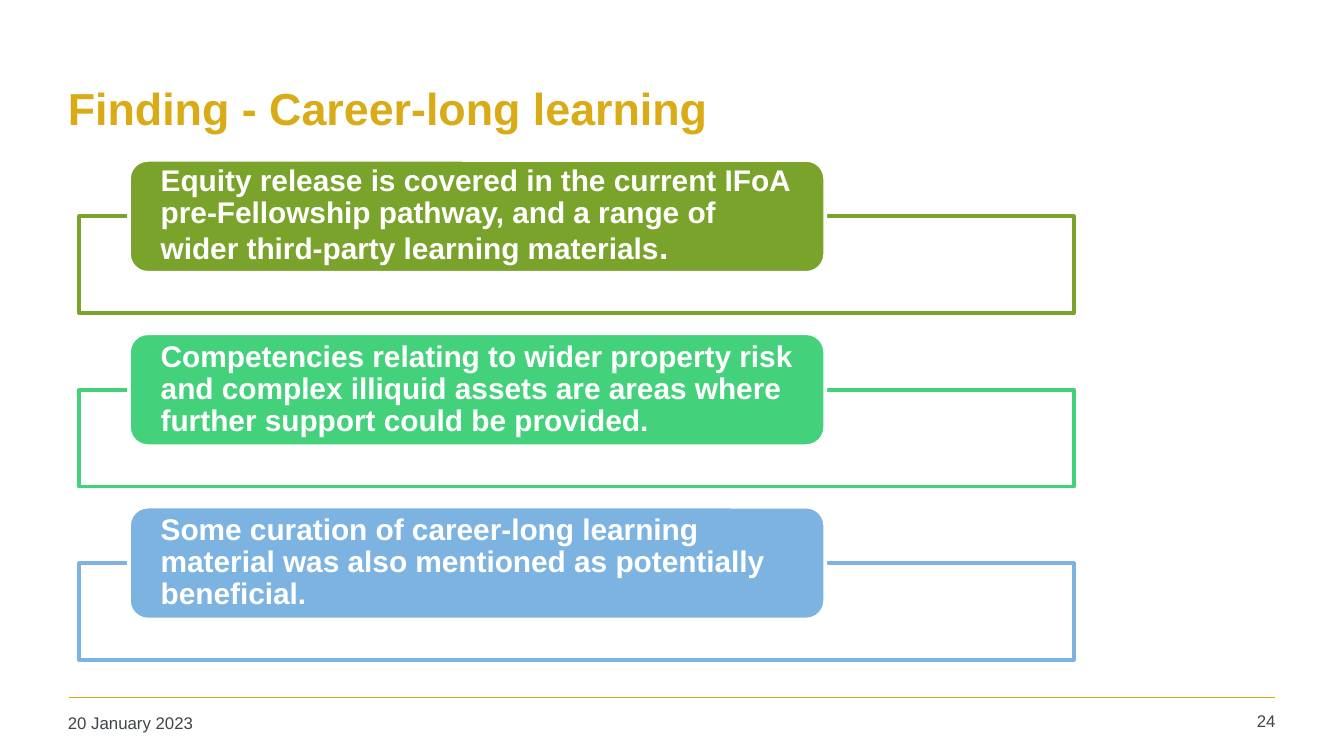
from dataclasses import dataclass

from pptx import Presentation
from pptx.dml.color import RGBColor
from pptx.enum.shapes import MSO_CONNECTOR, MSO_SHAPE
from pptx.enum.text import MSO_ANCHOR, PP_ALIGN
from pptx.oxml.ns import qn
from pptx.shapes.autoshape import Shape
from pptx.slide import Slide
from pptx.text.text import TextFrame
from pptx.util import Emu, Pt

EMU_PER_PX = 4572  # 200 px to the inch


@dataclass(frozen=True)
class Theme:
    font: str = "Arial"
    gold: str = "D9AB16"
    grey: str = "3F4548"
    white: str = "FFFFFF"
    olive: str = "79A32A"
    green: str = "44D17C"
    blue: str = "7CB3E1"
    title_size: int = 24
    body_size: int = 16
    stop_size: int = 18
    footer_size: int = 9


@dataclass(frozen=True)
class Box:
    left: int
    top: int
    width: int
    height: int


@dataclass(frozen=True)
class Inset:
    left: int
    top: int
    right: int
    bottom: int


@dataclass(frozen=True)
class Span:
    text: str
    size: int
    color: str
    bold: bool = False


@dataclass(frozen=True)
class Finding:
    color: str
    spans: tuple[Span, ...]


@dataclass(frozen=True)
class Label:
    box: Box
    span: Span
    align: PP_ALIGN = PP_ALIGN.LEFT
    anchor: MSO_ANCHOR = MSO_ANCHOR.TOP


THEME = Theme()
PAGE_WIDTH, PAGE_HEIGHT = 2000, 1125
FIRST_TOP, FINDING_PITCH, FRAME_DROP = 238, 258, 84
LABEL_INSET = Inset(15, 8, 15, 8)
BANNER_INSET = Inset(39, 0, 36, 0)


def px(length: int) -> Emu:
    return Emu(length * EMU_PER_PX)


def place(box: Box) -> tuple[Emu, ...]:
    return px(box.left), px(box.top), px(box.width), px(box.height)


def body_span(text: str, size: int = THEME.body_size) -> Span:
    return Span(text, size, THEME.white, bold=True)


def write(frame: TextFrame, spans: tuple[Span, ...], inset: Inset,
          align: PP_ALIGN, anchor: MSO_ANCHOR, spacing: float = 1.0) -> None:
    frame_format = {
        "word_wrap": True, "vertical_anchor": anchor,
        "margin_left": px(inset.left), "margin_right": px(inset.right),
        "margin_top": px(inset.top), "margin_bottom": px(inset.bottom),
    }
    for name, value in frame_format.items():
        setattr(frame, name, value)
    para = frame.paragraphs[0]
    para.alignment, para.line_spacing = align, spacing
    for span in spans:
        run = para.add_run()
        run.text = span.text
        font_format = {"name": THEME.font, "size": Pt(span.size), "bold": span.bold}
        for name, value in font_format.items():
            setattr(run.font, name, value)
        run.font.color.rgb = RGBColor.from_string(span.color)


def draw_label(page: Slide, label: Label) -> None:
    shape = page.shapes.add_textbox(*place(label.box))
    write(shape.text_frame, (label.span,), LABEL_INSET, label.align, label.anchor)


def draw_shape(page: Slide, kind: MSO_SHAPE, box: Box, fill: str, line: str) -> Shape:
    shape = page.shapes.add_shape(kind, *place(box))
    shape.shadow.inherit = False
    shape.fill.solid()
    shape.fill.fore_color.rgb = RGBColor.from_string(fill)
    shape.line.color.rgb = RGBColor.from_string(line)
    shape.line.width = Pt(2)
    return shape


def draw_finding(page: Slide, finding: Finding, top: int) -> None:
    draw_shape(page, MSO_SHAPE.RECTANGLE, Box(118, top + FRAME_DROP, 1480, 144),
               THEME.white, finding.color)
    banner = draw_shape(page, MSO_SHAPE.ROUNDED_RECTANGLE, Box(192, top, 1036, 168),
                        finding.color, THEME.white)
    write(banner.text_frame, finding.spans, BANNER_INSET, PP_ALIGN.LEFT,
          MSO_ANCHOR.MIDDLE, spacing=0.9)


def draw_rule(page: Slide, left: int, right: int, top: int) -> None:
    rule = page.shapes.add_connector(
        MSO_CONNECTOR.STRAIGHT, px(left), px(top), px(right), px(top))
    rule.line.color.rgb = RGBColor.from_string(THEME.gold)
    rule.line.width = Pt(1)
    properties = rule._element.spPr
    properties.append(properties.makeelement(qn("a:effectLst"), {}))


LABELS = (
    Label(Box(86, 66, 1814, 188),
          Span("Finding - Career-long learning", THEME.title_size, THEME.gold, True),
          anchor=MSO_ANCHOR.MIDDLE),
    Label(Box(86, 1052, 440, 54),
          Span("20 January 2023", THEME.footer_size, THEME.grey)),
    Label(Box(1771, 1050, 142, 56),
          Span("24", THEME.footer_size, THEME.grey), PP_ALIGN.RIGHT),
)

FINDINGS = (
    Finding(THEME.olive, (
        body_span("Equity release is covered in the current IFoA pre-Fellowship "
                  "pathway, and a range of wider third-party learning materials"),
        body_span(".", THEME.stop_size))),
    Finding(THEME.green, (
        body_span("Competencies relating to wider property risk and complex illiquid "
                  "assets are areas where further support could be provided."),)),
    Finding(THEME.blue, (
        body_span("Some curation of career-long learning material was also mentioned "
                  "as potentially beneficial."),)),
)


def main() -> None:
    deck = Presentation()
    deck.slide_width, deck.slide_height = px(PAGE_WIDTH), px(PAGE_HEIGHT)
    page = deck.slides.add_slide(deck.slide_layouts[6])

    # Footer rule, title and footer texts
    draw_rule(page, 102, 1898, 1038)
    for label in LABELS:
        draw_label(page, label)

    # Findings, evenly stacked
    for index, finding in enumerate(FINDINGS):
        draw_finding(page, finding, FIRST_TOP + index * FINDING_PITCH)

    deck.save("out.pptx")


if __name__ == "__main__":
    main()
